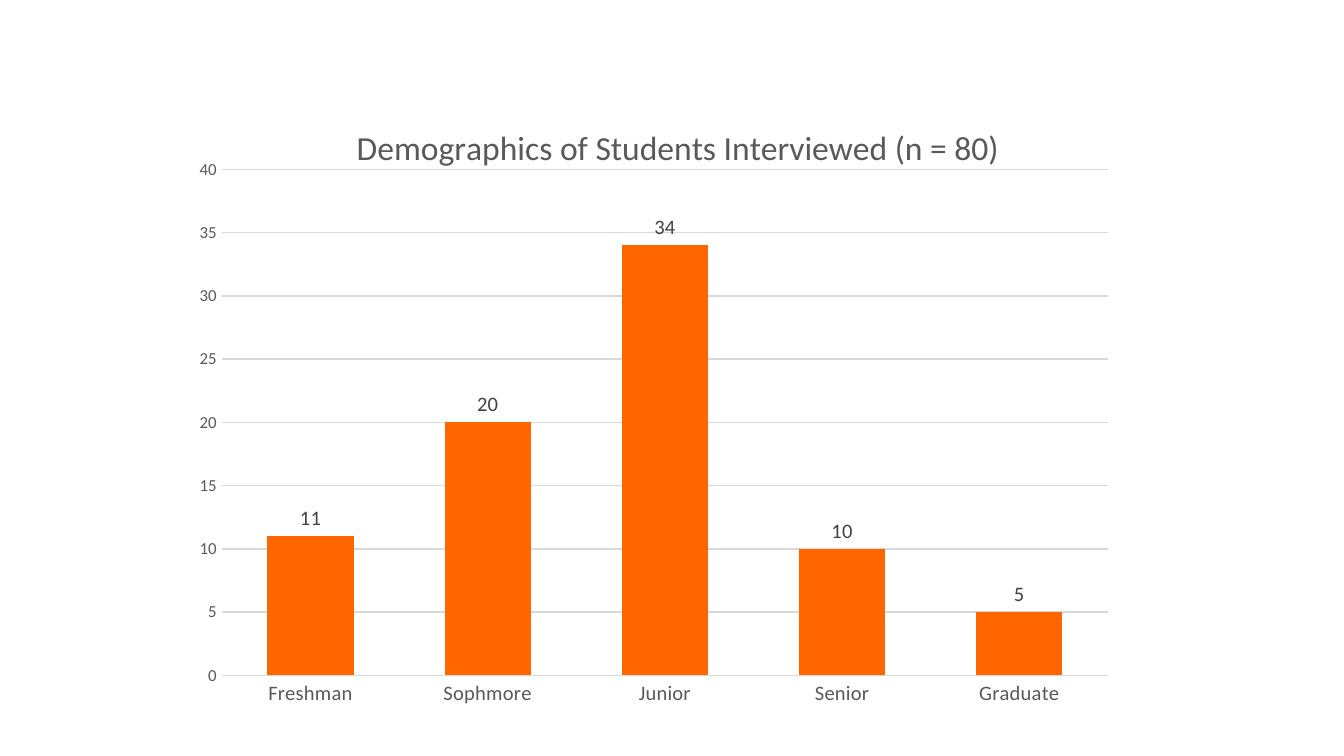
from dataclasses import dataclass

from lxml import etree
from pptx import Presentation
from pptx.chart.data import CategoryChartData
from pptx.dml.color import RGBColor
from pptx.enum.chart import XL_CHART_TYPE, XL_LABEL_POSITION, XL_TICK_MARK
from pptx.oxml.ns import qn
from pptx.util import Emu, Pt

COLUMNS = XL_CHART_TYPE.COLUMN_CLUSTERED
OUTSIDE_END = XL_LABEL_POSITION.OUTSIDE_END
NO_TICK = XL_TICK_MARK.NONE

PX = 914400 / 134.4
SLIDE_SIZE = (1344, 756)
CHART_BOX = (180, 73, 948, 646)


@dataclass(frozen=True)
class Theme:
    font: str = "Calibri"
    background: str = "FFFFFF"
    bar: str = "FF6600"
    text: str = "595959"
    label: str = "404040"
    grid: str = "D9D9D9"
    title_size: int = 18
    label_size: int = 11
    scale_size: int = 9
    line_width: float = 0.75


THEME = Theme()
STUDENTS = {"Freshman": 11, "Sophmore": 20, "Junior": 34, "Senior": 10, "Graduate": 5}


def px(length):
    return Emu(round(length * PX))


def format_font(font, size, color=THEME.text, bold=False):
    font.name = THEME.font
    font.size = Pt(size)
    font.bold = bold
    font.color.rgb = RGBColor.from_string(color)


def write_text(frame, text, **font_format):
    paragraph = frame.paragraphs[0]
    run = paragraph.add_run()
    run.text = text
    format_font(run.font, **font_format)


def format_line(line):
    line.color.rgb = RGBColor.from_string(THEME.grid)
    line.width = Pt(THEME.line_width)


def set_layout(parent, index, **settings):
    """Give a chart part a manual layout, in fractions of the chart."""
    for old_layout in parent.findall(qn("c:layout")):
        parent.remove(old_layout)
    layout = etree.Element(qn("c:layout"))
    manual = etree.SubElement(layout, qn("c:manualLayout"))
    for name, value in settings.items():
        etree.SubElement(manual, qn(f"c:{name}")).set("val", str(value))
    parent.insert(index, layout)


def add_demographics_chart(slide, box):
    data = CategoryChartData()
    data.categories = list(STUDENTS)
    data.add_series("Series 1", list(STUDENTS.values()))
    chart = slide.shapes.add_chart(COLUMNS, *map(px, box), data).chart
    chart.has_legend = False
    format_font(chart.font, THEME.label_size)

    # Title
    chart.has_title = True
    write_text(chart.chart_title.text_frame,
               "Demographics of Students Interviewed (n = 80)", size=THEME.title_size)
    set_layout(chart.chart_title.element if hasattr(chart.chart_title, "element")
               else chart.element.find(".//" + qn("c:title")),
               1, xMode="edge", yMode="edge", x=0.18, y=0.07)

    # Plot area
    set_layout(chart.element.find(".//" + qn("c:plotArea")), 0,
               layoutTarget="inner", xMode="edge", yMode="edge",
               x=42 / box[2], y=96.5 / box[3], w=886 / box[2], h=506 / box[3])

    # Axes
    category_axis, value_axis = chart.category_axis, chart.value_axis
    for axis, size in ((category_axis, THEME.label_size), (value_axis, THEME.scale_size)):
        axis.major_tick_mark = axis.minor_tick_mark = NO_TICK
        format_font(axis.tick_labels.font, size)
    format_line(category_axis.format.line)
    value_axis.format.line.fill.background()
    value_axis.minimum_scale, value_axis.maximum_scale = 0, 40
    value_axis.major_unit = 5
    value_axis.has_major_gridlines = True
    format_line(value_axis.major_gridlines.format.line)

    # Columns and their values
    plot = chart.plots[0]
    plot.gap_width, plot.overlap = 105, -27
    plot.vary_by_categories = False
    series = plot.series[0]
    series.format.fill.solid()
    series.format.fill.fore_color.rgb = RGBColor.from_string(THEME.bar)
    labels = series.data_labels
    labels.show_value = True
    labels.position = OUTSIDE_END
    format_font(labels.font, THEME.label_size, THEME.label)


def main():
    presentation = Presentation()
    presentation.slide_width, presentation.slide_height = map(px, SLIDE_SIZE)
    slide = presentation.slides.add_slide(presentation.slide_layouts[6])
    background = slide.background.fill
    background.solid()
    background.fore_color.rgb = RGBColor.from_string(THEME.background)
    add_demographics_chart(slide, CHART_BOX)
    presentation.save("out.pptx")


if __name__ == "__main__":
    main()
